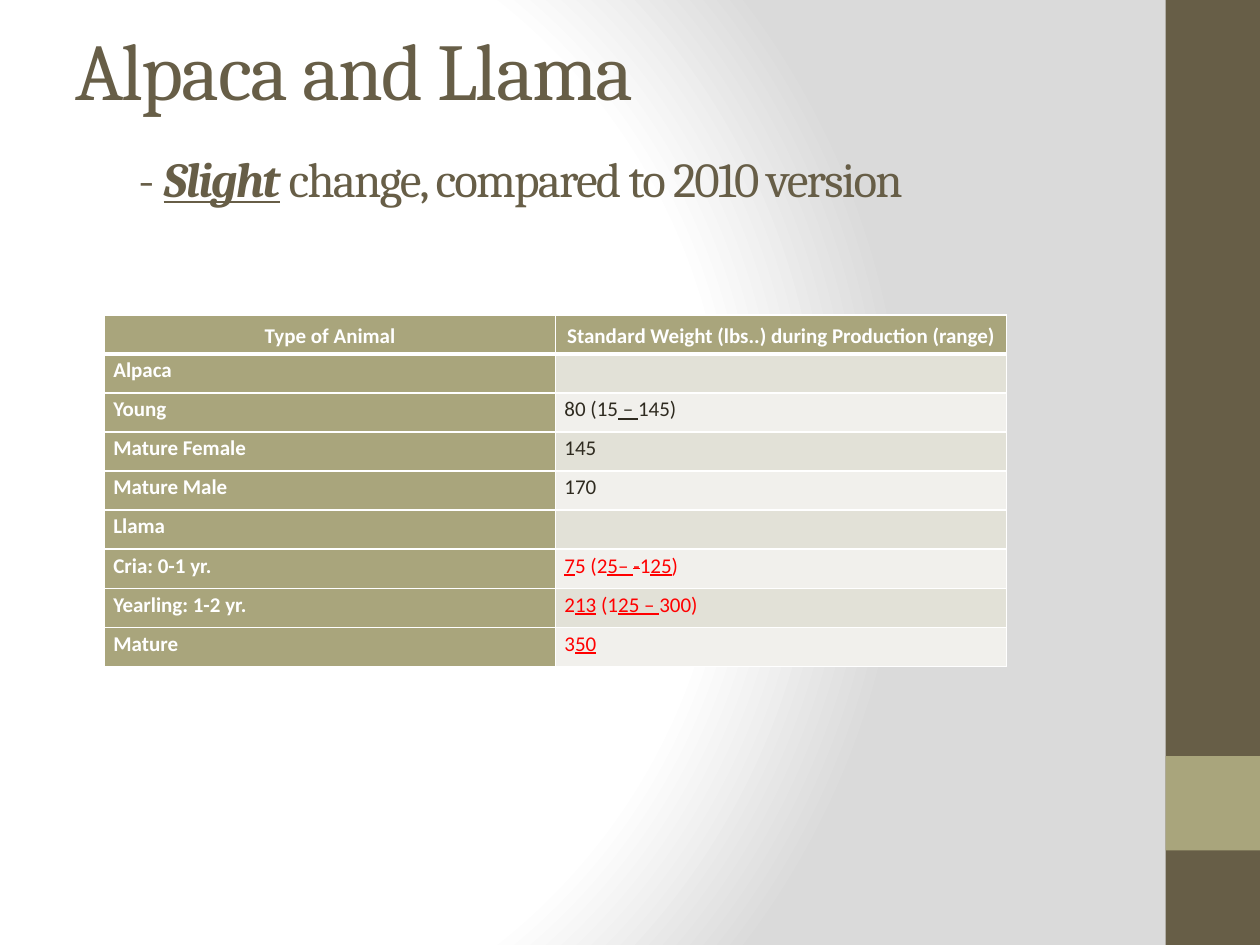
from lxml.etree import SubElement as Sub
from pptx import Presentation
from pptx.dml.color import RGBColor as RGB
from pptx.enum.shapes import MSO_SHAPE as Shape
from pptx.enum.text import MSO_ANCHOR as Anchor, PP_ALIGN as Align
from pptx.oxml import parse_xml
from pptx.oxml.ns import nsdecls, qn
from pptx.util import Inches, Pt

BROWN = RGB(0x67, 0x5E, 0x47)
OLIVE = RGB(0xA9, 0xA5, 0x7C)
DARK = RGB(0x2F, 0x2B, 0x20)
RED = RGB(0xFF, 0x00, 0x00)
WHITE = RGB(0xFF, 0xFF, 0xFF)
GREY = RGB(0xDA, 0xDA, 0xDA)
BANDS = [RGB(0xF1, 0xF0, 0xEC), RGB(0xE2, 0xE1, 0xD7)]


def add_run(para, words, **looks):
    run = para.add_run()
    run.text = words
    color = looks.pop("color")
    for key, value in looks.items():
        setattr(run.font, key, value)
    run.font.color.rgb = color
    return run.font._element


def add_edge(cell, side, width):
    line = Sub(cell._tc.get_or_add_tcPr(), qn(f"a:{side}"), w=str(Pt(width)))
    Sub(Sub(line, qn("a:solidFill")), qn("a:srgbClr"), val=str(WHITE))


deck = Presentation()
deck.slide_width, deck.slide_height = Inches(10), Inches(7.5)
slide = deck.slides.add_slide(deck.slide_layouts[6])

# Background: white glow fading to grey
stops = "".join(
    f'<a:gs pos="{spot * 1000}"><a:srgbClr val="{tint}"/></a:gs>'
    for spot, tint in [(0, WHITE), (75, WHITE), (100, GREY)])
slide.background.fill.solid()
plain = slide.background._cSld.bg.bgPr.find(qn("a:solidFill"))
plain.getparent().replace(plain, parse_xml(
    f'<a:gradFill {nsdecls("a")} rotWithShape="1"><a:gsLst>{stops}</a:gsLst>'
    '<a:path path="circle">'
    '<a:fillToRect l="20000" t="50000" r="100000" b="50000"/>'
    '</a:path></a:gradFill>'))

# Side bar with its square
for top, height, color in [(0, 7.5, BROWN), (6, 0.75, OLIVE)]:
    bar = slide.shapes.add_shape(Shape.RECTANGLE, Inches(9.25), Inches(top),
                                 Inches(0.75), Inches(height))
    bar.shadow.inherit = False
    bar.fill.solid()
    bar.fill.fore_color.rgb = color
    bar.line.fill.background()

# Title
frame = slide.shapes.add_textbox(Inches(0.5), Inches(0.3), Inches(8.33),
                                 Inches(1.25)).text_frame
frame.word_wrap = True
frame.vertical_anchor = Anchor.MIDDLE
para = frame.paragraphs[0]
title = [
    ("Alpaca and Llama", 46, {}),
    ("\t", 46, {}),
    ("- ", 28, {}),
    ("Slight", 28, dict(bold=True, italic=True, underline=True)),
    (" change, compared to 2010 version", 28, {}),
]
for spot, (words, size, looks) in enumerate(title):
    if spot == 1:
        para.add_line_break()
    mark = add_run(para, words, name="Cambria", size=Pt(size), color=BROWN,
                   **looks)
    mark.set("spc", "-100")

# Table: label, color of the weight, its parts ("u" underlined, "s" struck)
rows = [
    ("Type of Animal", WHITE,
     [("Standard Weight (lbs..) during Production (range)", "")]),
    ("Alpaca", DARK, []),
    ("Young", DARK, [("80 (15", ""), (" – ", "u"), ("145)", "")]),
    ("Mature Female", DARK, [("145", "")]),
    ("Mature Male", DARK, [("170", "")]),
    ("Llama", DARK, []),
    ("Cria: 0-1 yr.", RED,
     [("7", "u"), ("5 (2", ""), ("5– ", "u"), ("-", "s"), ("1", ""),
      ("25", "u"), (")", "")]),
    ("Yearling: 1-2 yr.", RED,
     [("2", ""), ("13", "u"), (" (1", ""), ("25 – ", "u"), ("300)", "")]),
    ("Mature", RED, [("3", ""), ("50", "u")]),
]
grid = slide.shapes.add_table(len(rows), 2, Inches(0.83), Inches(2.5),
                              Inches(7.16), Inches(0.31 * len(rows))).table
for r, (label, color, parts) in enumerate(rows):
    grid.rows[r].height = Inches(0.31)
    head = r == 0
    for c, (texts, ink) in enumerate([([(label, "")], WHITE), (parts, color)]):
        cell = grid.cell(r, c)
        cell.margin_left = cell.margin_right = Inches(0.07)
        cell.margin_top = cell.margin_bottom = 0
        cell.vertical_anchor = Anchor.MIDDLE if head else Anchor.TOP
        for side in ("lnL", "lnR", "lnT", "lnB"):
            thick = (head and side == "lnB") or (r == 1 and side == "lnT")
            add_edge(cell, side, 3 if thick else 1)
        cell.fill.solid()
        cell.fill.fore_color.rgb = OLIVE if head or c == 0 else BANDS[r % 2]
        para = cell.text_frame.paragraphs[0]
        para.alignment = Align.CENTER if head else Align.LEFT
        if texts:
            para.line_spacing = 1.15
        for words, style in texts:
            mark = add_run(para, words, name="Calibri", size=Pt(12),
                           bold=head or c == 0, underline=style == "u",
                           color=ink)
            if style == "s":
                mark.set("strike", "sngStrike")

deck.save("out.pptx")
